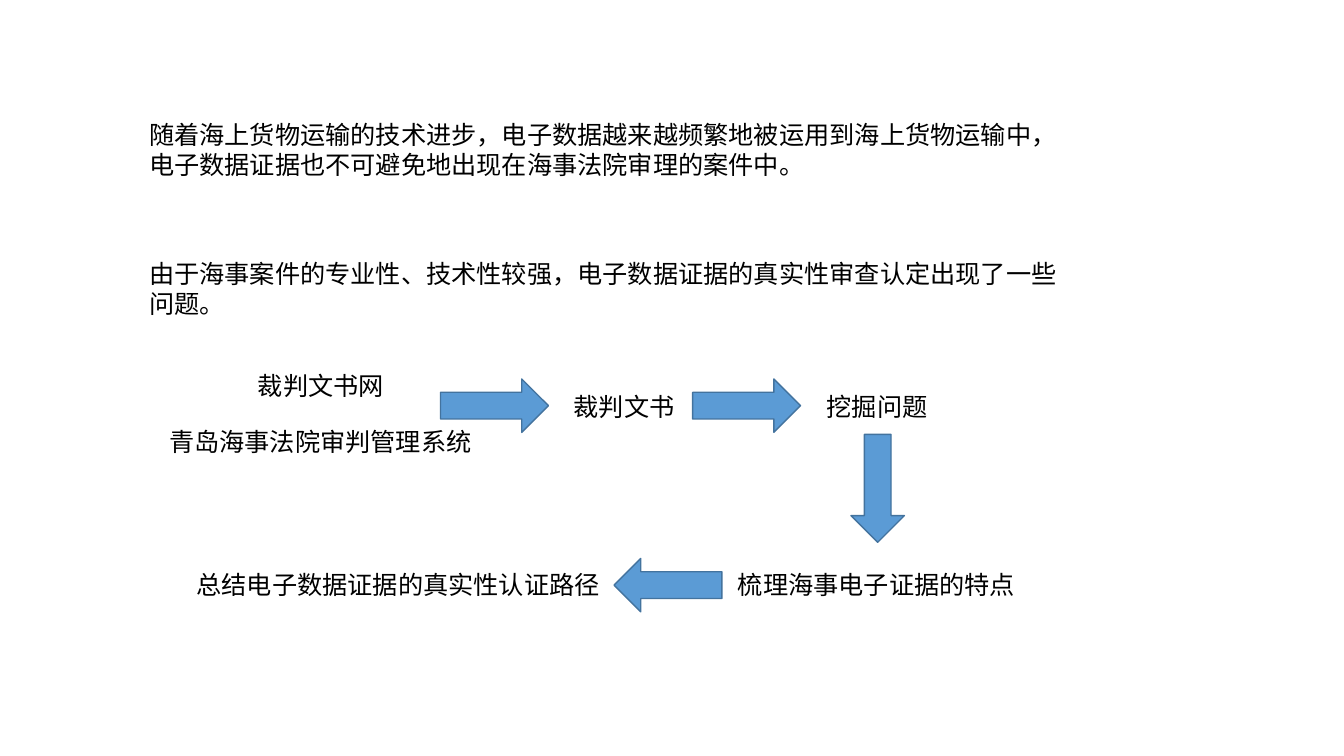
from dataclasses import dataclass

from pptx import Presentation
from pptx.dml.color import RGBColor as RGB
from pptx.enum.shapes import MSO_SHAPE as Shape
from pptx.enum.text import MSO_AUTO_SIZE as AutoSize
from pptx.util import Inches, Pt

SLIDE_W, SLIDE_H = Inches(13.33), Inches(7.5)


@dataclass(frozen=True)
class Theme:
    font: str = "Calibri"
    size: float = 18
    text: RGB = RGB(0x00, 0x00, 0x00)
    arrow_fill: RGB = RGB(0x5B, 0x9B, 0xD5)
    arrow_line: RGB = RGB(0x43, 0x73, 0x9E)
    line_width: float = 1


THEME = Theme()

# Left and top are percentages of the slide's width and height.
INTRO_LEFT = 10.35
INTRO = [
    (15.07, "随着海上货物运输的技术进步，电子数据越来越频繁地被运用到海上货物运输中，"
            "电子数据证据也不可避免地出现在海事法院审理的案件中。"),
    (33.47, "由于海事案件的专业性、技术性较强，电子数据证据的真实性审查认定出现了一些问题。"),
]
STEPS = [
    (18.45, 48.27, "裁判文书网"),
    (11.85, 55.73, "青岛海事法院审判管理系统"),
    (41.94, 51.07, "裁判文书"),
    (60.77, 51.07, "挖掘问题"),
    (54.16, 74.67, "梳理海事电子证据的特点"),
    (13.88, 74.67, "总结电子数据证据的真实性认证路径"),
]
ARROWS = [
    (32.78, 50.13, Shape.RIGHT_ARROW),
    (51.54, 50.13, Shape.RIGHT_ARROW),
    (63.32, 57.47, Shape.DOWN_ARROW),
    (45.69, 73.87, Shape.LEFT_ARROW),
]
INTRO_SIZE = Inches(9.42), Inches(0.71)
STEP_HEIGHT = Inches(0.4)
CHAR_WIDTH, INSETS = Pt(18.18), Inches(0.2)
ARROW_LENGTH, ARROW_BREADTH = Inches(1.07), Inches(0.53)


def place(left, top):
    """Turn percentages of the slide into lengths."""
    return int(SLIDE_W * left / 100), int(SLIDE_H * top / 100)


def add_text(s, left, top, size, text, wrap):
    tf = s.shapes.add_textbox(*place(left, top), *size).text_frame
    tf.word_wrap = wrap
    tf.auto_size = AutoSize.SHAPE_TO_FIT_TEXT
    p = tf.paragraphs[0]
    p.text = text
    p.font.name = THEME.font
    p.font.size = Pt(THEME.size)
    p.font.color.rgb = THEME.text


def add_step(s, left, top, text):
    """Add a one-line label as wide as its characters."""
    width = len(text) * CHAR_WIDTH + INSETS
    add_text(s, left, top, (width, STEP_HEIGHT), text, wrap=False)


def add_arrow(s, left, top, kind):
    size = ARROW_LENGTH, ARROW_BREADTH
    if kind == Shape.DOWN_ARROW:
        size = size[::-1]
    sp = s.shapes.add_shape(kind, *place(left, top), *size)
    sp.shadow.inherit = False
    sp.fill.solid()
    sp.fill.fore_color.rgb = THEME.arrow_fill
    sp.line.color.rgb = THEME.arrow_line
    sp.line.width = Pt(THEME.line_width)


def main():
    prs = Presentation()
    prs.slide_width, prs.slide_height = SLIDE_W, SLIDE_H
    s = prs.slides.add_slide(prs.slide_layouts[6])
    for top, text in INTRO:
        add_text(s, INTRO_LEFT, top, INTRO_SIZE, text, wrap=True)
    for step in STEPS:
        add_step(s, *step)
    for arrow in ARROWS:
        add_arrow(s, *arrow)
    prs.save("out.pptx")


if __name__ == "__main__":
    main()
